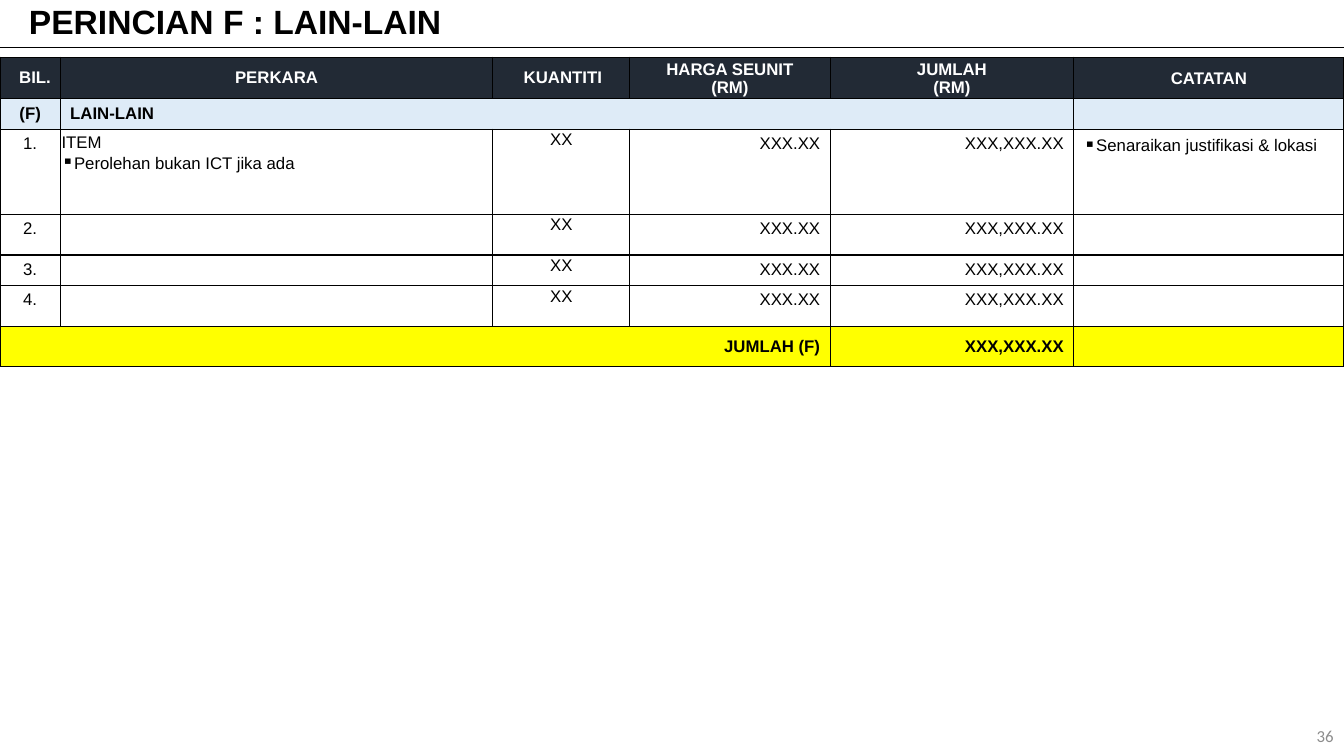
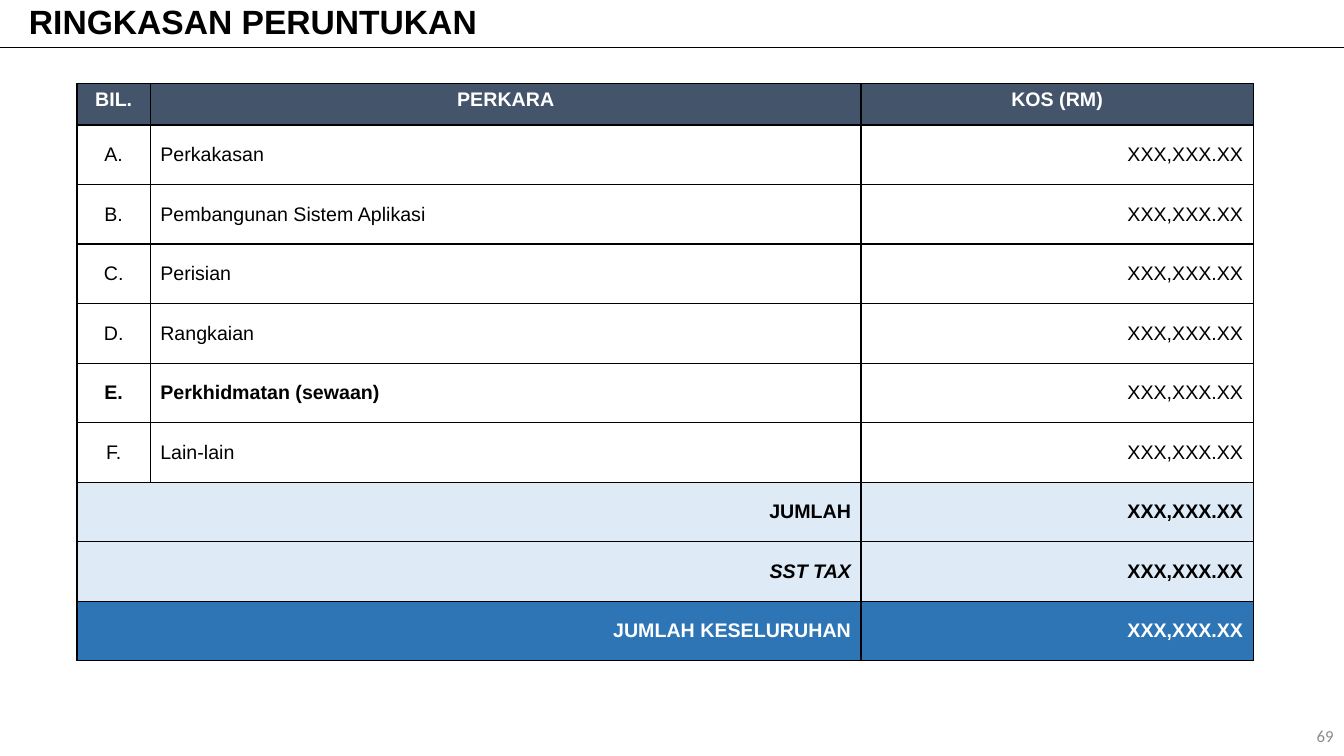
from dataclasses import dataclass, replace

from lxml.etree import SubElement
from pptx import Presentation
from pptx.dml.color import RGBColor
from pptx.enum.shapes import MSO_SHAPE
from pptx.enum.text import MSO_ANCHOR, PP_ALIGN
from pptx.oxml import parse_xml
from pptx.oxml.ns import nsdecls, qn
from pptx.util import Cm, Pt


@dataclass(frozen=True)
class Theme:
    """Colours, fonts and type sizes of the deck."""
    black: str = "000000"
    white: str = "FFFFFF"
    grey: str = "8C8C8C"
    navy: str = "222A35"
    slate: str = "44546A"
    pale: str = "DEEBF7"
    blue: str = "2E75B6"
    yellow: str = "FFFF00"
    font: str = "Arial"
    foot: str = "Calibri"
    head: int = 24
    small: int = 12
    large: int = 14
    rule: float = 0.75
    edge: int = 1
    plain: str = "{2D5ABB26-0587-4C30-8999-92F81FD0307C}"


THEME = Theme()
LEFT, MID, RIGHT = PP_ALIGN.LEFT, PP_ALIGN.CENTER, PP_ALIGN.RIGHT
TOP, HALF = MSO_ANCHOR.TOP, MSO_ANCHOR.MIDDLE


@dataclass(frozen=True)
class Look:
    """How the text and ground of one cell or box appear."""
    size: int = THEME.small
    font: str = THEME.font
    ink: str = THEME.black
    bold: bool = False
    slant: bool = False
    align: PP_ALIGN = LEFT
    anchor: MSO_ANCHOR = TOP
    fill: str = ""
    pad: tuple = (0.25, 0.13, 0.25, 0.13)
    indent: float = 0
    lead: object = None
    sides: str = "LRTB"


class Deck:
    """Builds slides that share one theme."""

    def __init__(self, theme):
        """Start an empty wide deck."""
        self.theme = theme
        self.show = Presentation()
        self.show.slide_width, self.show.slide_height = Cm(33.87), Cm(19.05)

    def page(self, title, number):
        """Add a slide with its title bar and number."""
        self.slide = self.show.slides.add_slide(self.show.slide_layouts[6])
        self.bar(title)
        self.note(number)

    def bar(self, title):
        """Draw the outlined title bar."""
        box = self.slide.shapes.add_shape(
            MSO_SHAPE.RECTANGLE, 0, 0, Cm(33.91), Cm(1.19))
        box.shadow.inherit = False
        box.fill.background()
        box.line.color.rgb = RGBColor.from_string(self.theme.black)
        box.line.width = Pt(self.theme.rule)
        box.text_frame.vertical_anchor = HALF
        look = Look(size=self.theme.head, bold=True, indent=0.48, lead=0.9)
        self.words(box.text_frame, (title,), look)

    def note(self, number):
        """Place the slide number."""
        box = self.slide.shapes.add_textbox(
            Cm(26.24), Cm(18.03), Cm(7.62), Cm(1.02))
        box.text_frame.word_wrap = True
        box.text_frame.vertical_anchor = HALF
        look = Look(font=self.theme.foot, ink=self.theme.grey, align=RIGHT)
        self.words(box.text_frame, (number,), look)

    def words(self, frame, lines, look):
        """Fill a text frame, one paragraph per line."""
        for spot, line in enumerate(lines):
            para = frame.add_paragraph() if spot else frame.paragraphs[0]
            para.alignment = look.align
            if look.lead:
                para.line_spacing = look.lead
            props = para._p.get_or_add_pPr()
            if look.indent:
                props.set("marL", str(Cm(look.indent)))
            if line.startswith("▪"):
                props.set("marL", str(Cm(0.25)))
                props.set("indent", str(-Cm(0.25)))
                SubElement(props, qn("a:buChar"), char="▪")
                line = line[1:]
            if not line:
                SubElement(para._p, qn("a:endParaRPr"), sz=str(look.size * 100))
                continue
            run = para.add_run()
            run.text = line
            run.font.name = look.font
            run.font.size = Pt(look.size)
            run.font.bold = look.bold
            run.font.italic = look.slant
            run.font.color.rgb = RGBColor.from_string(look.ink)

    def edge(self, cell, sides):
        """Rule the named sides of a cell."""
        props = cell._tc.get_or_add_tcPr()
        for spot, side in enumerate(s for s in "LRTB" if s in sides):
            props.insert(spot, parse_xml(
                f'<a:ln{side} {nsdecls("a")} w="{Pt(self.theme.edge)}"><a:solidFill>'
                f'<a:srgbClr val="{self.theme.black}"/></a:solidFill></a:ln{side}>'))

    def cell(self, cell, text, look):
        """Style and fill one table cell."""
        (cell.margin_left, cell.margin_top,
         cell.margin_right, cell.margin_bottom) = map(Cm, look.pad)
        cell.vertical_anchor = look.anchor
        if look.fill:
            cell.fill.solid()
            cell.fill.fore_color.rgb = RGBColor.from_string(look.fill)
        else:
            cell.fill.background()
        self.edge(cell, look.sides)
        self.words(cell.text_frame, text.split("\n"), look)

    def table(self, left, top, wides, highs, rows, spans=()):
        """Add a table from rows of text and look pairs."""
        grid = self.slide.shapes.add_table(
            len(highs), len(wides), Cm(left), Cm(top),
            Cm(sum(wides)), Cm(sum(highs))).table
        grid.first_row = grid.horz_banding = False
        grid._tbl.tblPr.find(qn("a:tableStyleId")).text = self.theme.plain
        for col, wide in zip(grid.columns, wides):
            col.width = Cm(wide)
        for row, high in zip(grid.rows, highs):
            row.height = Cm(high)
        for y, row in enumerate(rows):
            for x, (text, look) in enumerate(row):
                self.cell(grid.cell(y, x), text, look)
        for y, first, last in spans:
            grid.cell(y, first).merge(grid.cell(y, last))


def others(deck):
    """Build the detail slide."""
    deck.page("PERINCIAN F : LAIN-LAIN", "36")
    thin = (0.03, 0.03, 0.03, 0)
    head = Look(ink=THEME.white, bold=True, align=MID, anchor=HALF,
                fill=THEME.navy, pad=thin)
    flush = replace(head, pad=(0, 0, 0, 0))
    band = Look(bold=True, anchor=HALF, fill=THEME.pale)
    total = replace(band, fill=THEME.yellow, align=RIGHT)
    item = Look(pad=thin, lead=Pt(15.1))
    remark = replace(item, pad=Look().pad)
    count = Look(align=MID, pad=thin)
    index, money = Look(align=MID), Look(align=RIGHT)
    rows = [
        [("BIL.", replace(flush, indent=0.25)), ("PERKARA", flush),
         ("KUANTITI", replace(flush, indent=0.08)),
         ("HARGA SEUNIT\n(RM)", head), ("JUMLAH\n(RM)", head),
         ("CATATAN", head)],
        [("(F)", replace(band, align=MID)), ("LAIN-LAIN", band)]
        + [("", band)] * 4,
    ]
    works = ["ITEM\n▪Perolehan bukan ICT jika ada", "", "", ""]
    notes = ["▪Senaraikan justifikasi & lokasi", "", "", ""]
    for spot, (work, note) in enumerate(zip(works, notes), 1):
        rows.append([(f"{spot}.", index), (work, item), ("XX", count),
                     ("XXX.XX", money), ("XXX,XXX.XX", money), (note, remark)])
    rows.append([("JUMLAH (F)", total)] + [("", total)] * 3
                + [("XXX,XXX.XX", total), ("", total)])
    deck.table(0, 1.44, [1.52, 10.9, 3.45, 5.05, 6.14, 6.81],
               [0.98, 0.73, 2.14, 1.03, 0.76, 1.03, 1.01],
               rows, [(1, 1, 4), (6, 0, 3)])


def recap(deck):
    """Build the budget summary slide."""
    deck.page("RINGKASAN PERUNTUKAN", "69")
    head = Look(size=THEME.large, ink=THEME.white, bold=True, align=MID,
                fill=THEME.slate)
    body = Look(size=THEME.large, anchor=HALF)
    money = replace(body, align=RIGHT)
    total = replace(money, bold=True, fill=THEME.pale)
    grand = replace(total, fill=THEME.blue, ink=THEME.white)
    rows = [[(text, head) for text in ("BIL.", "PERKARA", "KOS (RM)")]]
    parts = ["Perkakasan", "Pembangunan Sistem Aplikasi", "Perisian",
             "Rangkaian", "Perkhidmatan (sewaan)", "Lain-lain"]
    for mark, part in zip("ABCDEF", parts):
        look = replace(body, bold=mark == "E")
        rows.append([(f"{mark}.", replace(look, align=MID)), (part, look),
                     ("XXX,XXX.XX", money)])
    for text, look in (("JUMLAH", total), ("SST TAX", replace(total, slant=True)),
                       ("JUMLAH KESELURUHAN", grand)):
        rows.append([("", replace(look, sides="LTB")),
                     (text, replace(look, sides="RTB")),
                     ("XXX,XXX.XX", replace(look, slant=False))])
    deck.table(1.94, 2.11, [1.85, 17.91, 9.88], [1.04] + [1.5] * 9, rows)


def main():
    """Build and save the deck."""
    deck = Deck(THEME)
    others(deck)
    recap(deck)
    deck.show.save("out.pptx")


if __name__ == "__main__":
    main()
